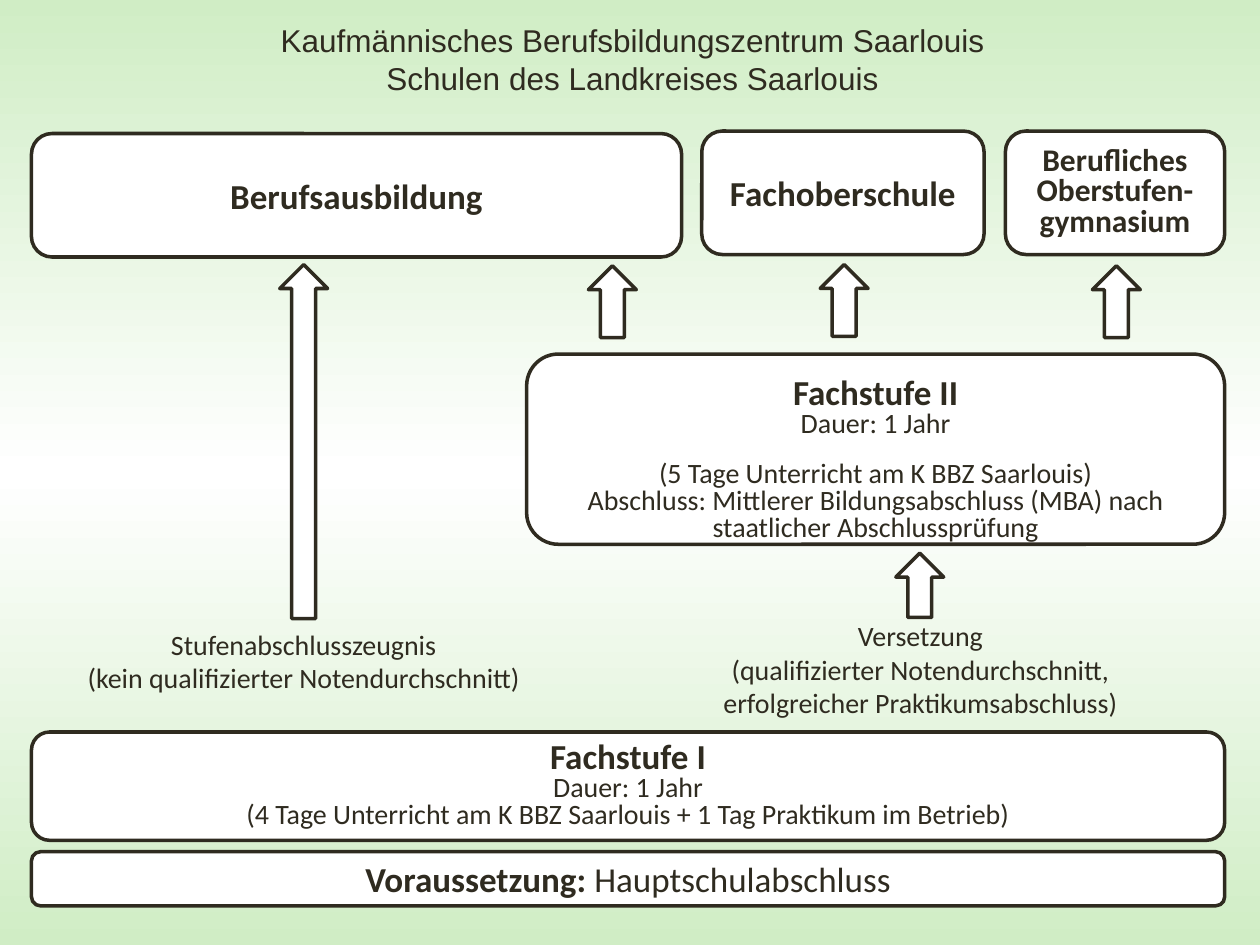
from copy import deepcopy
from dataclasses import dataclass

from lxml import etree
from pptx import Presentation
from pptx.dml.color import RGBColor
from pptx.enum.shapes import MSO_SHAPE
from pptx.enum.text import MSO_ANCHOR, PP_ALIGN
from pptx.oxml.ns import qn
from pptx.util import Inches, Pt

CARD = MSO_SHAPE.ROUNDED_RECTANGLE
ARROW = MSO_SHAPE.UP_ARROW
MIDDLE = MSO_ANCHOR.MIDDLE
CENTER = PP_ALIGN.CENTER
COLORS = {"ink": "2F2B20", "white": "FFFFFF", "green": "D0EDC5"}
LEFT, RIGHT = 0.25, 9.72
ARROW_WIDTH = 0.38


@dataclass
class Line:
    text: str
    size: int = 16
    bold: bool = False
    spacing: float = 1.0
    plain_tail: str = ""


@dataclass
class Box:
    left: float
    top: float
    width: float
    height: float
    lines: list[Line]
    top_inset: float = 0.05


@dataclass
class Arrow:
    left: float
    top: float
    height: float


TITLE = Box(0.04, 0.12, 9.96, 0.71, [
    Line("Kaufmännisches Berufsbildungszentrum Saarlouis", 18),
    Line("Schulen des Landkreises Saarlouis", 18),
])
LABELS = [
    Box(0.2, 4.93, 4.42, 0.64, [
        Line("Stufenabschlusszeugnis"),
        Line("(kein qualifizierter Notendurchschnitt)"),
    ]),
    Box(4.98, 4.86, 4.65, 0.91, [
        Line("Versetzung"),
        Line("(qualifizierter Notendurchschnitt,"),
        Line("erfolgreicher Praktikumsabschluss)"),
    ]),
]
CARDS = [
    Box(LEFT, 1.06, 5.16, 0.98, [Line("Berufsausbildung", 20, True)]),
    Box(5.57, 1.04, 2.24, 0.98, [Line("Fachoberschule", 20, True)]),
    Box(7.98, 1.04, RIGHT - 7.98, 0.98,
        [Line("Berufliches Oberstufen-gymnasium", 18, True, 0.8)]),
    Box(4.18, 2.81, RIGHT - 4.18, 1.51, [
        Line("Fachstufe II", 20, True, 1.5),
        Line("Dauer: 1 Jahr", spacing=0.8),
        Line("(5 Tage Unterricht am K BBZ Saarlouis)", spacing=1.5),
        Line("Abschluss: Mittlerer Bildungsabschluss (MBA) nach "
             "staatlicher Abschlussprüfung", spacing=0.8),
    ], top_inset=0),
    Box(LEFT, 5.81, RIGHT - LEFT, 0.86, [
        Line("Fachstufe I", 20, True, 0.8),
        Line("Dauer: 1 Jahr", spacing=0.8),
        Line("(4 Tage Unterricht am K BBZ Saarlouis + 1 Tag Praktikum im Betrieb)",
             spacing=0.8),
    ]),
    Box(LEFT, 6.76, RIGHT - LEFT, 0.43,
        [Line("Voraussetzung: ", 20, True, plain_tail="Hauptschulabschluss")]),
]
ARROWS = [
    Arrow(2.22, 2.1, 2.81),
    Arrow(4.67, 2.11, 0.57),
    Arrow(6.51, 2.1, 0.57),
    Arrow(8.67, 2.11, 0.57),
    Arrow(7.11, 4.39, 0.51),
]


def rgb(name: str) -> RGBColor:
    return RGBColor.from_string(COLORS[name])


def paint_background(s) -> None:
    """Vertical gradient: green at both edges, white in the middle."""
    fill = s.background.fill
    fill.gradient()
    fill.gradient_angle = 90
    for stop in fill.gradient_stops:
        stop.color.rgb = rgb("green")
    stops = next(s._element.iter(qn("a:gsLst")))
    stops.insert(1, deepcopy(stops[0]))
    for stop, position in zip(fill.gradient_stops, (0, 0.5, 1)):
        stop.position = position
    fill.gradient_stops[1].color.rgb = rgb("white")


def write_lines(tf, lines: list[Line], font: str) -> None:
    tf.word_wrap = True
    for i, line in enumerate(lines):
        p = tf.paragraphs[0] if i == 0 else tf.add_paragraph()
        p.alignment = CENTER
        p.line_spacing = line.spacing
        p.font.name = font
        p.font.size = Pt(line.size)
        p.font.color.rgb = rgb("ink")
        p.font.bold = line.bold
        p.add_run().text = line.text
        if line.plain_tail:
            r = p.add_run()
            r.text = line.plain_tail
            r.font.bold = False


def add_text(s, box: Box, font: str = "Calibri") -> None:
    sp = s.shapes.add_textbox(Inches(box.left), Inches(box.top),
                              Inches(box.width), Inches(box.height))
    write_lines(sp.text_frame, box.lines, font)


def add_outlined(s, kind, left: float, top: float, width: float, height: float):
    """White shape with a dark, round-jointed outline."""
    sp = s.shapes.add_shape(kind, Inches(left), Inches(top),
                            Inches(width), Inches(height))
    sp.shadow.inherit = False
    sp.fill.solid()
    sp.fill.fore_color.rgb = rgb("white")
    sp.line.color.rgb = rgb("ink")
    sp.line.width = Pt(2)
    etree.SubElement(sp._element.spPr.find(qn("a:ln")), qn("a:round"))
    return sp


def add_card(s, box: Box) -> None:
    sp = add_outlined(s, CARD, box.left, box.top, box.width, box.height)
    tf = sp.text_frame
    tf.vertical_anchor = MIDDLE
    tf.margin_top = Inches(box.top_inset)
    write_lines(tf, box.lines, "Calibri")


def main() -> None:
    prs = Presentation()
    prs.slide_width, prs.slide_height = Inches(10), Inches(7.5)
    s = prs.slides.add_slide(prs.slide_layouts[6])
    paint_background(s)
    add_text(s, TITLE, "Arial")
    for label in LABELS:
        add_text(s, label)
    for card in CARDS:
        add_card(s, card)
    for arrow in ARROWS:
        add_outlined(s, ARROW, arrow.left, arrow.top, ARROW_WIDTH, arrow.height)
    prs.save("out.pptx")


if __name__ == "__main__":
    main()
